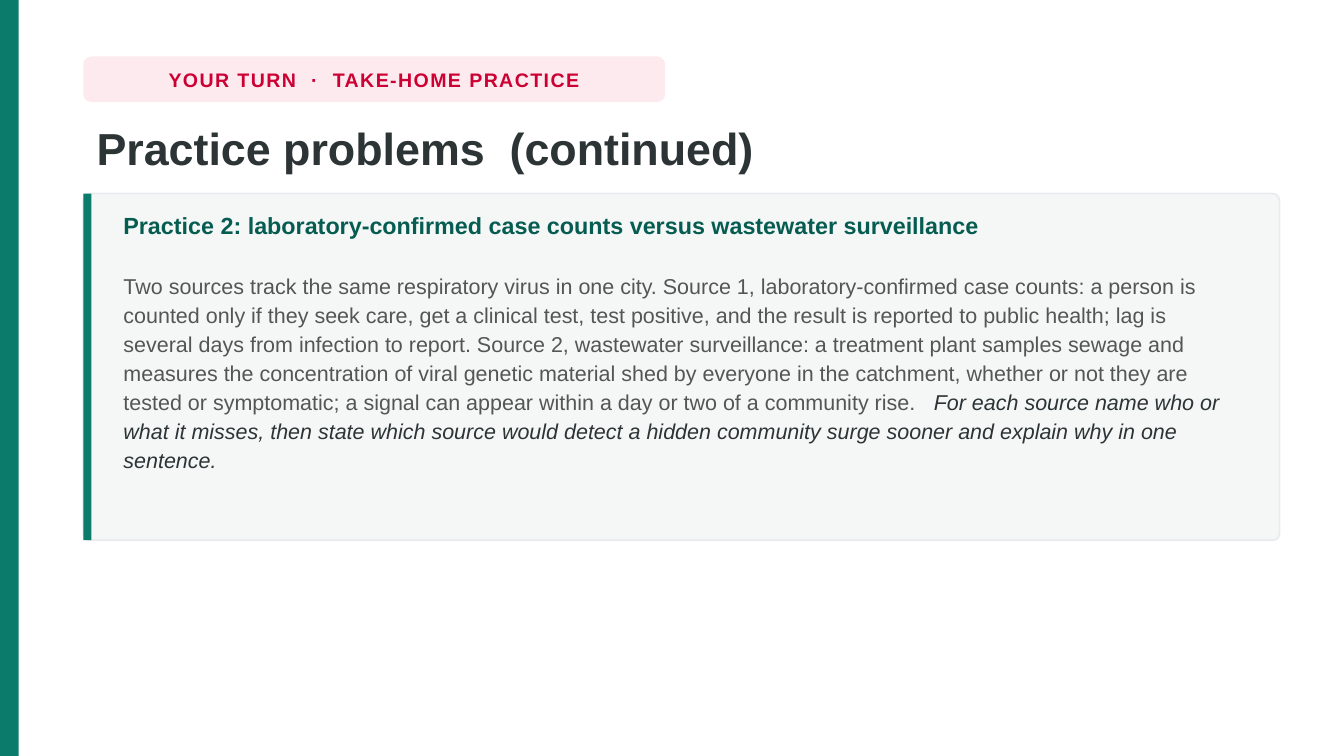
from pptx import Presentation
from pptx.dml.color import RGBColor
from pptx.enum.shapes import MSO_SHAPE as Shape
from pptx.enum.text import MSO_ANCHOR as Anchor, PP_ALIGN as Align
from pptx.util import Inches, Pt

TEAL = RGBColor(0x0B, 0x7B, 0x6B)
DARK_TEAL = RGBColor(0x06, 0x5C, 0x50)
PINK = RGBColor(0xFD, 0xEA, 0xEF)
CRIMSON = RGBColor(0xCC, 0x00, 0x33)
PANEL = RGBColor(0xF4, 0xF7, 0xF6)
BORDER = RGBColor(0xE8, 0xEC, 0xEE)
INK = RGBColor(0x2D, 0x34, 0x36)
GRAY = RGBColor(0x55, 0x55, 0x55)

PAGE_WIDTH = 10
PAGE_HEIGHT = PAGE_WIDTH * 9 / 16
LEFT = 0.62
WIDTH = 8.9
CARD_TOP = 1.44
CARD_HEIGHT = 2.58

SCENARIO = (
    "Two sources track the same respiratory virus in one city. "
    "Source 1, laboratory-confirmed case counts: a person is counted only if they "
    "seek care, get a clinical test, test positive, and the result is reported to "
    "public health; lag is several days from infection to report. "
    "Source 2, wastewater surveillance: a treatment plant samples sewage and measures "
    "the concentration of viral genetic material shed by everyone in the catchment, "
    "whether or not they are tested or symptomatic; a signal can appear within a day "
    "or two of a community rise.   "
)
QUESTION = (
    "For each source name who or what it misses, then state which source would detect "
    "a hidden community surge sooner and explain why in one sentence."
)


class SlideBuilder:
    font = "Arial"

    def __init__(self, page):
        self.page = page

    def panel(self, left, top, width, height, fill, radius=None, border=None):
        kind = Shape.RECTANGLE if radius is None else Shape.ROUNDED_RECTANGLE
        box = self.page.shapes.add_shape(
            kind, Inches(left), Inches(top), Inches(width), Inches(height))
        box.shadow.inherit = False
        if radius is not None:
            box.adjustments[0] = radius / min(width, height)
        box.fill.solid()
        box.fill.fore_color.rgb = fill
        if border is None:
            box.line.fill.background()
        else:
            box.line.color.rgb = border
            box.line.width = Pt(1)

    def text_box(self, left, top, width, height, wrap=True, anchor=Anchor.TOP):
        box = self.page.shapes.add_textbox(
            Inches(left), Inches(top), Inches(width), Inches(height))
        box.text_frame.word_wrap = wrap
        box.text_frame.vertical_anchor = anchor
        return box.text_frame

    def span(self, para, text, size, color, bold=False, italic=False, tracking=0):
        span = para.add_run()
        span.text = text
        span.font.name = self.font
        span.font.size = Pt(size)
        span.font.color.rgb = color
        span.font.bold = bold
        span.font.italic = italic
        if tracking:
            span.font._element.set("spc", str(round(tracking * 100)))


def main():
    deck = Presentation()
    deck.slide_width = Inches(PAGE_WIDTH)
    deck.slide_height = Inches(PAGE_HEIGHT)
    builder = SlideBuilder(deck.slides.add_slide(deck.slide_layouts[6]))

    builder.panel(0, 0, 0.14, PAGE_HEIGHT, TEAL)

    tag = (LEFT, 0.42, 4.33, 0.34)
    builder.panel(*tag, PINK, radius=0.06)
    para = builder.text_box(*tag, wrap=False, anchor=Anchor.MIDDLE).paragraphs[0]
    para.alignment = Align.CENTER
    builder.span(para, "YOUR TURN  ·  TAKE-HOME PRACTICE", 10.5, CRIMSON,
                 bold=True, tracking=0.8)

    title = builder.text_box(LEFT, 0.84, WIDTH, 0.56).paragraphs[0]
    title.line_spacing = 1.02
    builder.span(title, "Practice problems  (continued)", 24, INK, bold=True)

    builder.panel(LEFT, CARD_TOP, WIDTH, CARD_HEIGHT, PANEL, radius=0.05, border=BORDER)
    builder.panel(LEFT, CARD_TOP, 0.06, CARD_HEIGHT, TEAL)

    frame = builder.text_box(LEFT + 0.2, CARD_TOP + 0.08, WIDTH - 0.42, CARD_HEIGHT - 0.16)
    frame.margin_top = Inches(0.03)
    heading = frame.paragraphs[0]
    body = frame.add_paragraph()
    heading.line_spacing = body.line_spacing = 1.12
    heading.space_after = Pt(16.5)
    builder.span(
        heading,
        "Practice 2: laboratory-confirmed case counts versus wastewater surveillance",
        12.5, DARK_TEAL, bold=True)
    builder.span(body, SCENARIO, 11.5, GRAY)
    builder.span(body, QUESTION, 11.5, INK, italic=True)

    deck.save("out.pptx")


if __name__ == "__main__":
    main()
